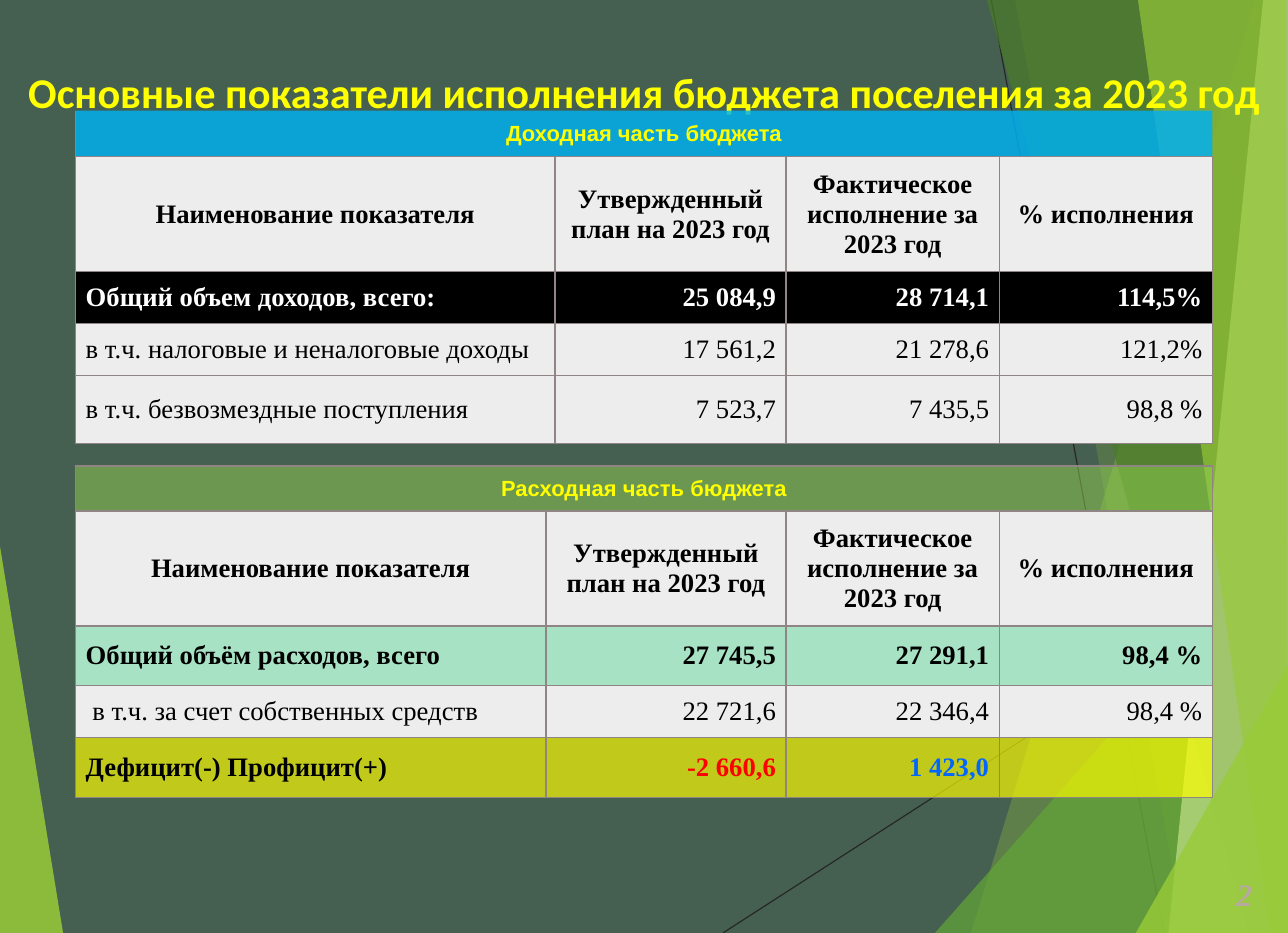
"""Builds the slide with the main figures of the 2023 settlement budget."""
from dataclasses import dataclass

from lxml import etree
from pptx import Presentation
from pptx import util as u
from pptx.dml import color as dml
from pptx.enum import shapes, text
from pptx.oxml import ns

CELL = u.Inches(0.01)
COLS, ROWS = 1142, 827
INSET = 9
SIDES = ("L", "R", "T", "B")
LEFT, MID, RIGHT = text.PP_ALIGN.LEFT, text.PP_ALIGN.CENTER, text.PP_ALIGN.RIGHT


@dataclass(frozen=True)
class Theme:
    back: str = "455F51"
    line: str = "262626"
    lime: str = "99CB38"
    leaf: str = "63A537"
    moss: str = "4A7C29"
    pale: str = "C2E088"
    gold: str = "FFFF00"
    black: str = "000000"
    white: str = "FFFFFF"
    red: str = "FF0000"
    blue: str = "0066FF"
    sky: str = "00B0F0"
    grass: str = "92D050"
    mint: str = "A8E2C5"
    grey: str = "EEEDED"
    edge: str = "918485"
    page: str = "B8A9A0"
    head: str = "Calibri"
    band: str = "Arial"
    body: str = "Times New Roman"
    head_pt: int = 27
    band_pt: int = 14
    body_pt: int = 17
    page_pt: int = 20


T = Theme()


@dataclass(frozen=True)
class Facet:
    points: tuple[tuple[int, int], ...]
    fill: str
    alpha: int


@dataclass(frozen=True)
class Row:
    height: int
    texts: tuple[str, ...]
    fill: str = T.grey
    alpha: int = 100
    bold: bool = False
    inks: tuple[str, ...] = (T.black,) * 4
    aligns: tuple = (LEFT, RIGHT, RIGHT, RIGHT)
    font: str = T.body
    size: int = T.body_pt
    edges: tuple[str, ...] = SIDES


@dataclass(frozen=True)
class Grid:
    top: int
    cols: tuple[int, ...]
    rows: tuple[Row, ...]


def band(high: int, label: str, fill: str, alpha: int, edges: tuple[str, ...] = SIDES) -> Row:
    """Describe the merged caption row of a table."""
    return Row(high, (label,), fill, alpha, True, (T.gold,), (MID,), T.band, T.band_pt, edges)


HEAD = Row(102, ("Наименование показателя", "Утвержденный план на 2023 год",
                 "Фактическое исполнение за 2023 год", "% исполнения"),
           bold=True, aligns=(MID,) * 4)

RAYS = (((641, ROWS), (COLS, 504)), ((879, 0), (1032, ROWS)))

FACETS = (
    Facet(((0, 484), (56, ROWS), (0, ROWS)), T.lime, 85),
    Facet(((1113, 0), (861, ROWS), (COLS, ROWS), (COLS, 0)), T.lime, 30),
    Facet(((900, 0), (1050, ROWS), (COLS, ROWS), (COLS, 0)), T.lime, 20),
    Facet(((829, ROWS), (COLS, 473), (COLS, ROWS)), T.leaf, 72),
    Facet(((875, 0), (1107, ROWS), (COLS, ROWS), (COLS, 0)), T.moss, 70),
    Facet(((1120, 0), (1036, ROWS), (COLS, ROWS), (COLS, 0)), T.pale, 70),
    Facet(((1009, 0), (1126, ROWS), (COLS, ROWS), (1140, 0)), T.lime, 65),
    Facet(((1007, ROWS), (COLS, 590), (COLS, ROWS)), T.lime, 80),
)

GRIDS = (
    Grid(98, (425, 205, 189, 189), (
        band(41, "Доходная часть бюджета", T.sky, 84, ("L", "B")),
        HEAD,
        Row(46, ("Общий объем доходов, всего:", "25 084,9", "28 714,1", "114,5%"),
            T.black, bold=True, inks=(T.white,) * 4),
        Row(46, ("в т.ч. налоговые и неналоговые доходы", "17 561,2", "21 278,6", "121,2%")),
        Row(60, ("в т.ч. безвозмездные поступления", "7 523,7", "7 435,5", "98,8 %")),
    )),
    Grid(413, (417, 213, 189, 189), (
        band(39, "Расходная часть бюджета", T.grass, 50),
        HEAD,
        Row(53, ("Общий объём расходов, всего", "27 745,5", "27 291,1", "98,4 %"),
            T.mint, bold=True),
        Row(46, (" в т.ч. за счет собственных средств", "22 721,6", "22 346,4", "98,4 %")),
        Row(53, ("Дефицит(-) Профицит(+)", "-2 660,6", "1 423,0", ""), T.gold, 67, True,
            (T.black, T.red, T.blue, T.black)),
    )),
)


def paint(fill, tint: str, node, alpha: int = 100) -> None:
    """Fill solidly and set the opacity in percent."""
    fill.solid()
    fill.fore_color.rgb = dml.RGBColor.from_string(tint)
    if alpha < 100:
        clr = node.find(".//" + ns.qn("a:srgbClr"))
        etree.SubElement(clr, ns.qn("a:alpha"), val=str(alpha * 1000))


def write(frame, words: str, font: str, size: int, ink: str, align, bold: bool = True) -> None:
    """Write one formatted paragraph into a text frame."""
    frame.word_wrap = True
    para = frame.paragraphs[0]
    para.text = words
    para.alignment = align
    para.font.name, para.font.size, para.font.bold = font, u.Pt(size), bold
    para.font.color.rgb = dml.RGBColor.from_string(ink)


def place(shape, left: int, top: int, wide: int, high: int) -> None:
    """Move a shape to its place on the grid."""
    shape.left, shape.top = left * CELL, top * CELL
    shape.width, shape.height = wide * CELL, high * CELL


def draw_ray(slide, start: tuple[int, int], end: tuple[int, int]) -> None:
    """Draw one thin background line."""
    ray = slide.shapes.add_connector(
        shapes.MSO_CONNECTOR.STRAIGHT, *(n * CELL for n in start + end))
    ray.line.width = u.Pt(0.75)
    ray.line.color.rgb = dml.RGBColor.from_string(T.line)
    etree.SubElement(ray.element.spPr, ns.qn("a:effectLst"))


def draw_facet(slide, facet: Facet) -> None:
    """Draw one translucent background polygon."""
    pen = slide.shapes.build_freeform(*facet.points[0], scale=CELL)
    pen.add_line_segments(facet.points[1:], close=True)
    shape = pen.convert_to_shape()
    shape.shadow.inherit = False
    shape.line.fill.background()
    paint(shape.fill, facet.fill, shape.element.spPr, facet.alpha)


def rule(props, edges: tuple[str, ...]) -> None:
    """Put the listed borders on a cell and clear the others."""
    for spot, side in enumerate(SIDES):
        line = etree.Element(ns.qn("a:ln" + side), w=str(u.Pt(1)))
        if side in edges:
            fill = etree.SubElement(line, ns.qn("a:solidFill"))
            etree.SubElement(fill, ns.qn("a:srgbClr"), val=T.edge)
        else:
            etree.SubElement(line, ns.qn("a:noFill"))
        props.insert(spot, line)


def draw_grid(slide, grid: Grid) -> None:
    """Draw one budget table."""
    high = sum(row.height for row in grid.rows)
    table = slide.shapes.add_table(
        len(grid.rows), len(grid.cols), 67 * CELL, grid.top * CELL,
        sum(grid.cols) * CELL, high * CELL).table
    table.first_row = table.horz_banding = False
    for col, wide in zip(table.columns, grid.cols):
        col.width = wide * CELL
    for line, row in zip(table.rows, grid.rows):
        line.height = row.height * CELL
        cells = list(line.cells)
        if len(row.texts) == 1:
            cells[0].merge(cells[-1])
        for cell in cells:
            cell.vertical_anchor = text.MSO_ANCHOR.MIDDLE
            cell.margin_left = cell.margin_right = INSET * CELL
            cell.margin_top = cell.margin_bottom = INSET * CELL
            props = cell._tc.get_or_add_tcPr()
            paint(cell.fill, row.fill, props, row.alpha)
            rule(props, row.edges)
        for cell, words, ink, align in zip(cells, row.texts, row.inks, row.aligns):
            write(cell.text_frame, words, row.font, row.size, ink, align, row.bold)


def main() -> None:
    """Build and save the slide."""
    deck = Presentation()
    deck.slide_width, deck.slide_height = COLS * CELL, ROWS * CELL
    slide = deck.slides.add_slide(deck.slide_layouts.get_by_name("Title Only"))
    paint(slide.background.fill, T.back, slide.element)
    for start, end in RAYS:
        draw_ray(slide, start, end)
    for facet in FACETS:
        draw_facet(slide, facet)
    title = slide.shapes.title
    title.element.getparent().append(title.element)
    place(title, 0, 59, COLS, 44)
    title.text_frame.auto_size = text.MSO_AUTO_SIZE.NONE
    title.text_frame.vertical_anchor = text.MSO_ANCHOR.MIDDLE
    write(title.text_frame, "Основные показатели исполнения бюджета поселения за 2023 год",
          T.head, T.head_pt, T.gold, MID)
    for grid in GRIDS:
        draw_grid(slide, grid)
    page = slide.shapes.add_textbox(0, 0, 0, 0)
    place(page, 1060, 772, 60, 40)
    page.text_frame.vertical_anchor = text.MSO_ANCHOR.MIDDLE
    write(page.text_frame, "2", T.body, T.page_pt, T.page, RIGHT)
    page.text_frame.paragraphs[0].font.italic = True
    deck.save("out.pptx")


if __name__ == "__main__":
    main()
